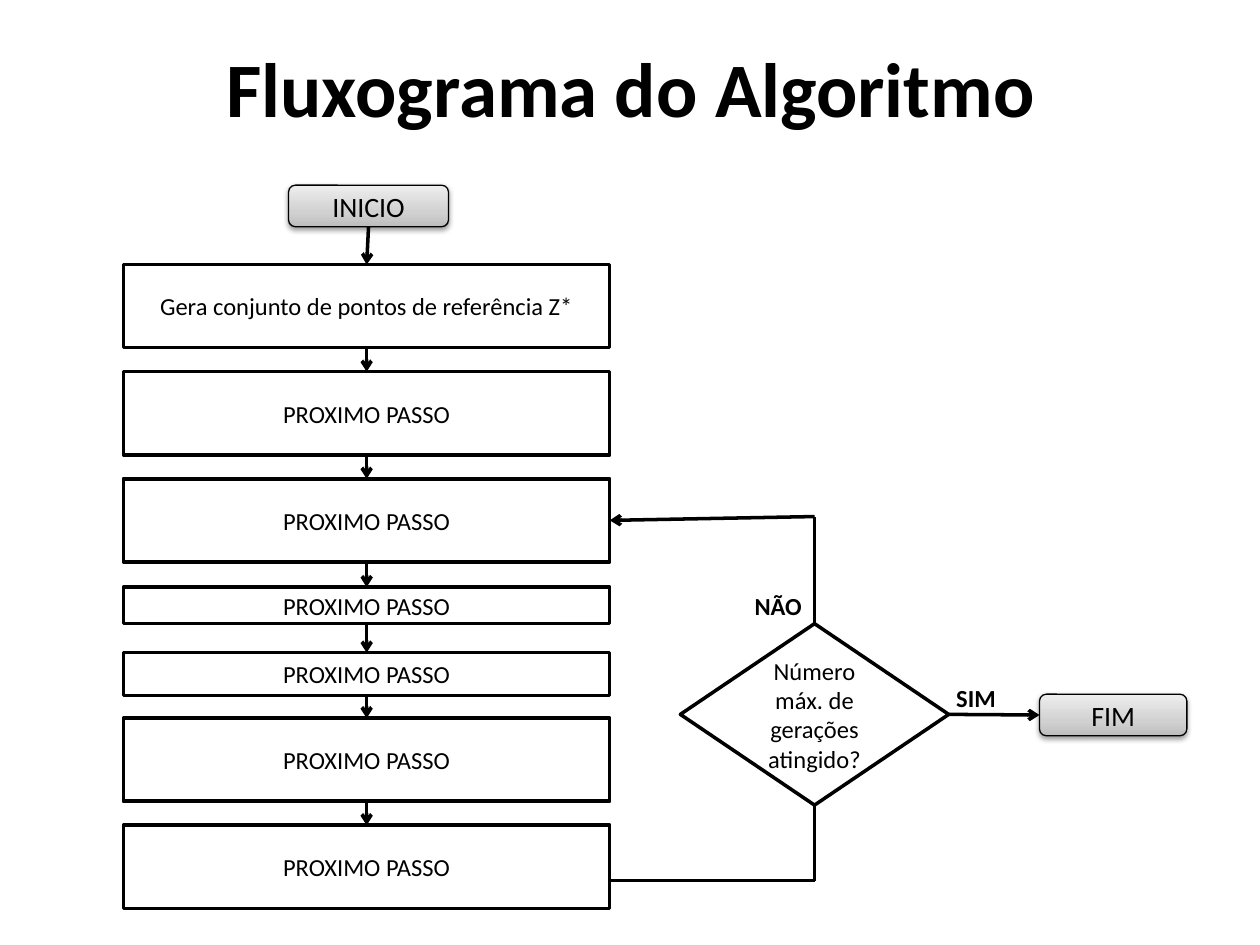
from itertools import pairwise

from lxml import etree
from pptx import Presentation
from pptx.dml.color import RGBColor
from pptx.enum.shapes import MSO_CONNECTOR as CONN, MSO_SHAPE as SHAPE
from pptx.enum.text import MSO_ANCHOR as ANCHOR, MSO_AUTO_SIZE as AUTO, PP_ALIGN as ALIGN
from pptx.oxml import parse_xml
from pptx.oxml.ns import nsdecls, qn
from pptx.util import Inches, Pt

BLACK = RGBColor(0x00, 0x00, 0x00)
WHITE = RGBColor(0xFF, 0xFF, 0xFF)
GRADIENT = [
    (0, RGBColor(0xBD, 0xBD, 0xBD)),
    (35, RGBColor(0xD1, 0xD1, 0xD1)),
    (100, RGBColor(0xEE, 0xEE, 0xEE)),
]
FONT = "Calibri"
TOP, LEFT, BOTTOM, RIGHT = range(4)

STEP_X, STEP_W = 0.98, 3.86
STEPS = [
    (2.1, 0.66, "Gera conjunto de pontos de referência Z*"),
    (2.95, 0.66, "PROXIMO PASSO"),
    (3.8, 0.66, "PROXIMO PASSO"),
    (4.66, 0.29, "PROXIMO PASSO"),
    (5.18, 0.34, "PROXIMO PASSO"),
    (5.7, 0.66, "PROXIMO PASSO"),
    (6.55, 0.66, "PROXIMO PASSO"),
]


def write(tf, text, size, bold=False, align=ALIGN.CENTER, anchor=ANCHOR.MIDDLE):
    tf.word_wrap = True
    tf.vertical_anchor = anchor
    p = tf.paragraphs[0]
    p.alignment = align
    r = p.add_run()
    r.text = text
    for name, value in {"name": FONT, "size": Pt(size), "bold": bold}.items():
        setattr(r.font, name, value)
    r.font.color.rgb = BLACK


def add_box(s, kind, box, text, size=14, line=2):
    sp = s.shapes.add_shape(kind, *map(Inches, box))
    sp.shadow.inherit = False
    sp.fill.solid()
    sp.fill.fore_color.rgb = WHITE
    sp.line.color.rgb = BLACK
    sp.line.width = Pt(line)
    write(sp.text_frame, text, size)
    return sp


def add_terminal(s, box, text):
    sp = add_box(s, SHAPE.ROUNDED_RECTANGLE, box, text, size=16, line=0.75)
    spPr = sp._element.spPr
    stops = "".join(
        f'<a:gs pos="{pos * 1000}"><a:srgbClr val="{color}"/></a:gs>'
        for pos, color in GRADIENT
    )
    spPr.replace(spPr.find(qn("a:solidFill")), parse_xml(
        f'<a:gradFill {nsdecls("a")} rotWithShape="1"><a:gsLst>{stops}</a:gsLst>'
        '<a:lin ang="16200000" scaled="0"/></a:gradFill>'
    ))
    spPr.find(qn("a:effectLst")).append(parse_xml(
        f'<a:outerShdw {nsdecls("a")} blurRad="{Pt(3.1)}" dist="{Pt(1.6)}" '
        f'dir="5400000" rotWithShape="0"><a:srgbClr val="{BLACK}">'
        '<a:alpha val="38000"/></a:srgbClr></a:outerShdw>'
    ))
    return sp


def add_label(s, box, text):
    sp = s.shapes.add_textbox(*map(Inches, box))
    sp.fill.solid()
    sp.fill.fore_color.rgb = WHITE
    write(sp.text_frame, text, 14, bold=True, align=ALIGN.LEFT, anchor=ANCHOR.TOP)
    sp.text_frame.auto_size = AUTO.SHAPE_TO_FIT_TEXT


def add_line(s, start, end, arrow=True):
    points = [(0, 0) if hasattr(site[0], "shape_id") else site for site in (start, end)]
    cn = s.shapes.add_connector(CONN.STRAIGHT, *(Inches(v) for pt in points for v in pt))
    for site, connect in ((start, cn.begin_connect), (end, cn.end_connect)):
        if hasattr(site[0], "shape_id"):
            connect(*site)
    cn.line.color.rgb = BLACK
    cn.line.width = Pt(2)
    if arrow:
        etree.SubElement(cn.line._get_or_add_ln(), qn("a:tailEnd"), type="arrow")
    etree.SubElement(cn._element.spPr, qn("a:effectLst"))


def add_title(s, box, text):
    sp = s.shapes.title
    for name, value in zip(("left", "top", "width", "height"), box):
        setattr(sp, name, Inches(value))
    write(sp.text_frame, text, 44, bold=True)


def add_steps(s, x, width):
    start = add_terminal(s, (x + 1.31, 1.47, 1.27, 0.33), "INICIO")
    steps = [
        add_box(s, SHAPE.RECTANGLE, (x, top, width, height), text)
        for top, height, text in STEPS
    ]
    for upper, lower in pairwise([start, *steps]):
        add_line(s, (upper, BOTTOM), (lower, TOP))
    return steps


def add_decision(s, box, loop_step, exit_x):
    x, y, w, h = box
    middle, loop_y, entry_y = x + w / 2, 4.1, 6.99
    add_label(s, (x + w - 0.04, y + 0.42, 0.71, 0.34), "SIM")
    add_label(s, (x + 0.49, y - 0.31, 0.71, 0.34), "NÃO")
    decision = add_box(s, SHAPE.FLOWCHART_DECISION, box,
                       "Número máx. de gerações atingido?")
    end = add_terminal(s, (8.25, 5.51, 1.17, 0.33), "FIM")
    add_line(s, (decision, RIGHT), (end, LEFT))
    add_line(s, (exit_x, entry_y), (middle, entry_y), arrow=False)
    add_line(s, (middle, entry_y), (decision, BOTTOM), arrow=False)
    add_line(s, (decision, TOP), (middle, loop_y), arrow=False)
    add_line(s, (middle, loop_y), (loop_step, RIGHT))


def main():
    prs = Presentation()
    prs.slide_width, prs.slide_height = Inches(10), Inches(7.5)
    s = prs.slides.add_slide(prs.slide_layouts[5])
    add_title(s, (0.51, 0.06, 9, 1.25), "Fluxograma do Algoritmo")
    steps = add_steps(s, STEP_X, STEP_W)
    add_decision(s, (5.4, 4.95, 2.13, 1.44), steps[2], STEP_X + STEP_W)
    prs.save("out.pptx")


if __name__ == "__main__":
    main()
